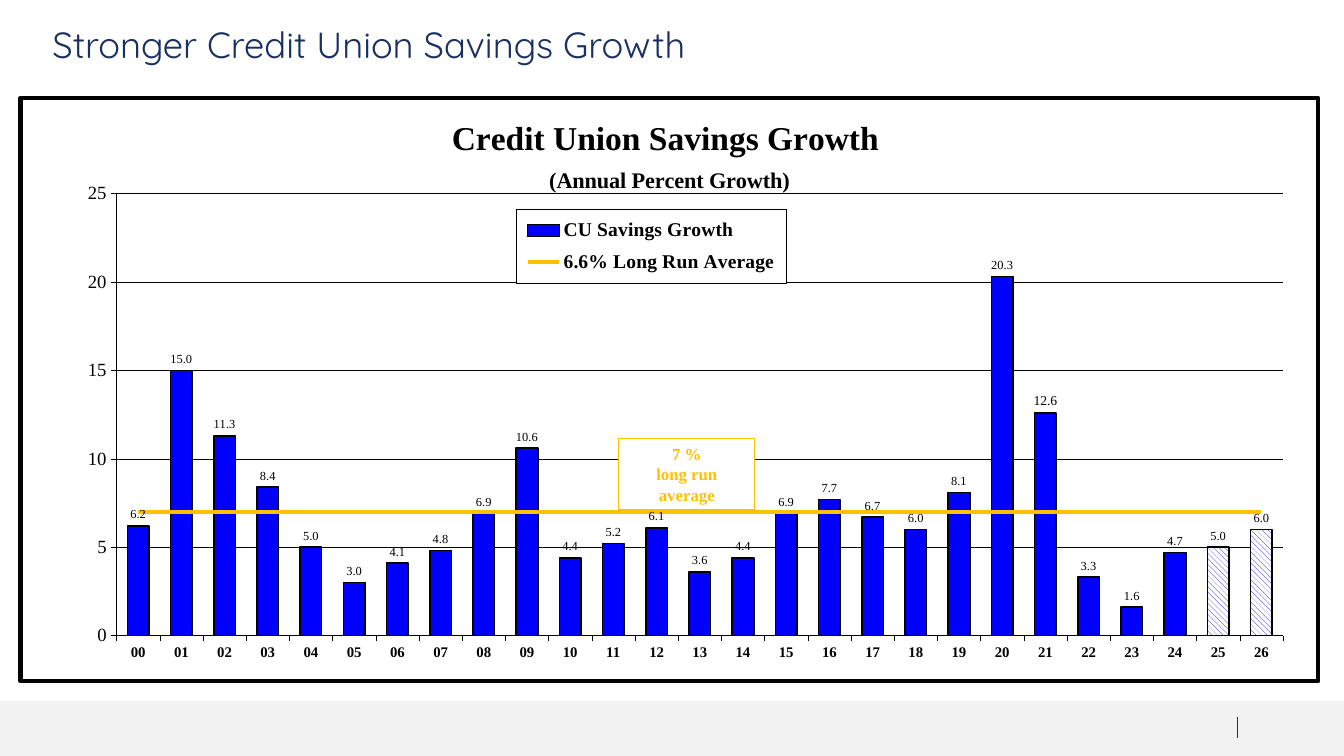
from dataclasses import dataclass

from lxml.etree import SubElement
from pptx import Presentation
from pptx.chart.data import CategoryChartData
from pptx.dml.color import RGBColor
from pptx.enum.chart import (XL_CHART_TYPE, XL_LABEL_POSITION, XL_LEGEND_POSITION,
                             XL_MARKER_STYLE, XL_TICK_MARK)
from pptx.enum.dml import MSO_PATTERN
from pptx.enum.shapes import MSO_CONNECTOR, MSO_SHAPE
from pptx.enum.text import MSO_ANCHOR, MSO_AUTO_SIZE, PP_ALIGN
from pptx.oxml import parse_xml
from pptx.oxml.ns import nsdecls, qn
from pptx.util import Pt

COLUMNS = XL_CHART_TYPE.COLUMN_CLUSTERED
OUTSIDE_END = XL_LABEL_POSITION.OUTSIDE_END
LEGEND_RIGHT = XL_LEGEND_POSITION.RIGHT
NO_MARKER = XL_MARKER_STYLE.NONE
TICK_OUTSIDE = XL_TICK_MARK.OUTSIDE
HATCH = MSO_PATTERN.WIDE_DOWNWARD_DIAGONAL
STRAIGHT = MSO_CONNECTOR.STRAIGHT
RECTANGLE = MSO_SHAPE.RECTANGLE
MIDDLE = MSO_ANCHOR.MIDDLE
FIXED_SIZE = MSO_AUTO_SIZE.NONE
LEFT, CENTER = PP_ALIGN.LEFT, PP_ALIGN.CENTER
TITLE_ONLY = 5


@dataclass(frozen=True)
class Theme:
    navy: str = "193061"
    band: str = "F2F2F2"
    blue: str = "0000FF"
    gold: str = "FFC000"
    black: str = "000000"
    white: str = "FFFFFF"
    heading_font: str = "Quicksand"
    chart_font: str = "Times New Roman"
    heading: float = 26
    chart_title: float = 24
    chart_subtitle: float = 16
    legend: float = 14
    value_axis: float = 13.4
    note: float = 12
    category_axis: float = 10.6
    late_label: float = 9.8
    label: float = 8.9
    hairline: float = 0.28
    frame: float = 3.34


@dataclass(frozen=True)
class Box:
    left: float
    top: float
    width: float
    height: float

    def points(self) -> tuple:
        return Pt(self.left), Pt(self.top), Pt(self.width), Pt(self.height)


THEME = Theme()
TITLE = Box(30.2, 15.8, 648, 35.3)
FOOTER = Box(0, 500.4, 960, 39.6)
CHART = Box(13, 68.4, 930.2, 419.8)
NOTE = Box(442, 313.2, 97.2, 51.1)

SAVINGS_GROWTH = (6.2, 15, 11.3, 8.4, 5, 3, 4.1, 4.8, 6.9, 10.6, 4.4, 5.2, 6.1, 3.6,
                  4.4, 6.9, 7.7, 6.7, 6, 8.1, 20.3, 12.6, 3.3, 1.6, 4.7, 5, 6)
YEARS = [f"{year:02d}" for year in range(len(SAVINGS_GROWTH))]
LONG_RUN_AVERAGE = 7
FORECAST_YEARS = (25, 26)
LATE_LABEL_YEAR = 21


def color(code: str) -> RGBColor:
    return RGBColor.from_string(code)


def style_font(font, name: str, size: float, code: str, bold: bool = False) -> None:
    font.name, font.size, font.bold = name, Pt(size), bold
    font.color.rgb = color(code)


def style_line(line, code: str, width: float) -> None:
    line.color.rgb = color(code)
    line.width = Pt(width)


def add_rectangle(slide, box: Box, fill: str):
    shape = slide.shapes.add_shape(RECTANGLE, *box.points())
    shape.shadow.inherit = False
    shape.fill.solid()
    shape.fill.fore_color.rgb = color(fill)
    shape.line.fill.background()
    return shape


def set_layout(element, index: int, **values) -> None:
    """Give a chart part a manual layout, in fractions of the chart area."""
    for old in element.findall(qn("c:layout")):
        element.remove(old)
    layout = parse_xml(f'<c:layout {nsdecls("c")}><c:manualLayout/></c:layout>')
    for name, value in values.items():
        SubElement(layout[0], qn(f"c:{name}")).set("val", str(value))
    element.insert(index, layout)


def set_frame(element, width: float) -> None:
    """Give a chart part that has its font set a white fill and black outline."""
    element.find(qn("c:txPr")).addprevious(parse_xml(
        f'<c:spPr {nsdecls("c", "a")}>'
        f'<a:solidFill><a:srgbClr val="{THEME.white}"/></a:solidFill>'
        f'<a:ln w="{int(Pt(width))}"><a:solidFill><a:srgbClr val="{THEME.black}"/>'
        '</a:solidFill></a:ln></c:spPr>'))


def move_average_to_line(chart) -> None:
    """Move the second series to a line plot on the same axes."""
    columns = chart.element.find(".//" + qn("c:barChart"))
    average = columns.findall(qn("c:ser"))[1]
    for column_setting in average.findall(qn("c:invertIfNegative")):
        average.remove(column_setting)
    axes = "".join(f'<c:axId val="{axis.get("val")}"/>'
                   for axis in columns.findall(qn("c:axId")))
    line_plot = parse_xml(
        f'<c:lineChart {nsdecls("c")}><c:grouping val="standard"/>'
        f'<c:varyColors val="0"/><c:marker val="1"/>{axes}</c:lineChart>')
    line_plot.insert(2, average)
    columns.addnext(line_plot)


def style_axis(axis, size: float, bold: bool) -> None:
    axis.major_tick_mark = TICK_OUTSIDE
    style_font(axis.tick_labels.font, THEME.chart_font, size, THEME.black, bold)
    style_line(axis.format.line, THEME.black, THEME.hairline)


def style_columns(series) -> None:
    series.format.fill.solid()
    series.format.fill.fore_color.rgb = color(THEME.blue)
    style_line(series.format.line, THEME.black, 1.11)
    labels = series.data_labels
    labels.show_value = True
    labels.number_format, labels.number_format_is_linked = "0.0", False
    labels.position = OUTSIDE_END
    style_font(labels.font, THEME.chart_font, THEME.label, THEME.black)
    late_label = series.points[LATE_LABEL_YEAR].data_label
    style_font(late_label.font, THEME.chart_font, THEME.late_label, THEME.black)
    late_label.position = OUTSIDE_END
    for year in FORECAST_YEARS:
        look = series.points[year].format
        look.fill.patterned()
        look.fill.pattern = HATCH
        look.fill.fore_color.rgb = color(THEME.blue)
        look.fill.back_color.rgb = color(THEME.white)
        style_line(look.line, THEME.black, 1.11)


def add_chart_title(chart) -> None:
    title = chart.chart_title
    heading = title.text_frame.paragraphs[0]
    subheading = title.text_frame.add_paragraph()
    for para, text, size in (
            (heading, "Credit Union Savings Growth", THEME.chart_title),
            (subheading, " ", THEME.chart_title),
            (subheading, "(Annual Percent Growth)", THEME.chart_subtitle)):
        span = para.add_run()
        span.text = text
        style_font(span.font, THEME.chart_font, size, THEME.black, True)
    set_layout(chart.element.find(".//" + qn("c:title")), 1,
               xMode="edge", yMode="edge", x=0.33, y=0.03)


def add_savings_chart(slide) -> None:
    data = CategoryChartData()
    data.categories = YEARS
    data.add_series("CU Savings Growth", SAVINGS_GROWTH)
    data.add_series("6.6% Long Run Average", [LONG_RUN_AVERAGE] * len(YEARS))
    chart = slide.shapes.add_chart(COLUMNS, *CHART.points(), data).chart
    style_font(chart.font, "Arial", 11.4, THEME.black, True)
    set_frame(chart.element, THEME.frame)
    add_chart_title(chart)
    move_average_to_line(chart)
    set_layout(chart.element.find(".//" + qn("c:plotArea")), 0, layoutTarget="inner",
               xMode="edge", yMode="edge", x=0.074, y=0.164, w=0.899, h=0.758)

    columns, line_plot = chart.plots
    columns.gap_width, columns.vary_by_categories = 100, False
    style_columns(columns.series[0])
    average = line_plot.series[0]
    average.smooth = False
    average.marker.style = NO_MARKER
    style_line(average.format.line, THEME.gold, THEME.frame)

    style_axis(chart.category_axis, THEME.category_axis, True)
    values = chart.value_axis
    style_axis(values, THEME.value_axis, False)
    values.minimum_scale, values.maximum_scale, values.major_unit = 0, 25, 5
    style_line(values.major_gridlines.format.line, THEME.black, THEME.hairline)

    chart.has_legend = True
    legend = chart.legend
    legend.position, legend.include_in_layout = LEGEND_RIGHT, False
    style_font(legend.font, THEME.chart_font, THEME.legend, THEME.black, True)
    legend_element = chart.element.find(".//" + qn("c:legend"))
    set_frame(legend_element, THEME.hairline)
    set_layout(legend_element, 1, xMode="edge", yMode="edge",
               x=0.382, y=0.191, w=0.208, h=0.126)


def add_heading(slide) -> None:
    title = slide.shapes.title
    title.left, title.top, title.width, title.height = TITLE.points()
    frame = title.text_frame
    frame.text = "Stronger Credit Union Savings Growth"
    frame.auto_size, frame.vertical_anchor = FIXED_SIZE, MIDDLE
    para = frame.paragraphs[0]
    para.alignment, para.line_spacing = LEFT, 0.9
    style_font(para.font, THEME.heading_font, THEME.heading, THEME.navy)


def add_footer(slide) -> None:
    add_rectangle(slide, FOOTER, THEME.band)
    divider = slide.shapes.add_connector(STRAIGHT, Pt(884.2), Pt(511.9), Pt(884.2), Pt(527))
    style_line(divider.line, THEME.navy, 0.5)
    SubElement(divider.element.spPr, qn("a:effectLst"))


def add_average_note(slide) -> None:
    note = add_rectangle(slide, NOTE, THEME.white)
    style_line(note.line, THEME.gold, 0.75)
    frame = note.text_frame
    frame.text = "7 %\nlong run\naverage"
    frame.word_wrap, frame.vertical_anchor = True, MIDDLE
    for para in frame.paragraphs:
        para.alignment = CENTER
        style_font(para.font, THEME.chart_font, THEME.note, THEME.gold, True)


def main() -> None:
    deck = Presentation()
    deck.slide_width, deck.slide_height = Pt(960), Pt(540)
    page = deck.slides.add_slide(deck.slide_layouts[TITLE_ONLY])
    add_footer(page)
    add_savings_chart(page)
    add_heading(page)
    add_average_note(page)
    deck.save("out.pptx")


if __name__ == "__main__":
    main()
